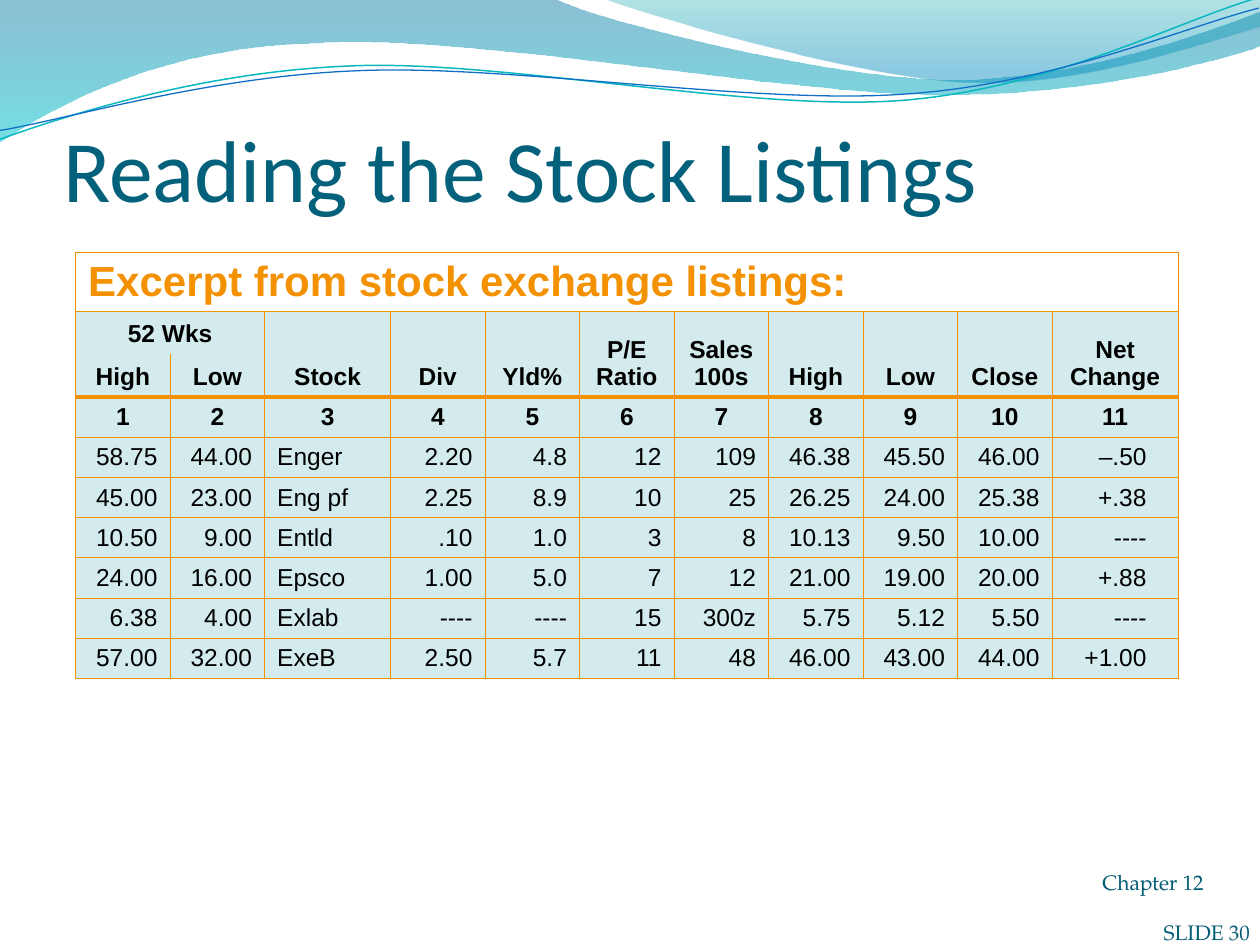
from lxml.etree import SubElement
from pptx import Presentation
from pptx.dml.color import RGBColor
from pptx.enum.text import MSO_ANCHOR, PP_ALIGN
from pptx.oxml.ns import qn
from pptx.util import Pt

SCALE = 9144
ORANGE, PALE, WHITE, BLACK = "F49100", "D3EBED", "FFFFFF", "000000"
TITLE_COLOR, FOOTER_COLOR = "04617B", "045D75"
FOOTER_FONT = "TeX Gyre Pagella"
THIN, THICK = 0.5, 3
CURVE_ROTATION = 357.3

COLUMN_WIDTHS = [75, 75, 100] + [75] * 7 + [100]
ROW_HEIGHTS = [23, 34, 34] + [23] * 7
TABLE_BOX = (60, 200, 875, 352)
STOCK_COLUMN, CHANGE_COLUMN = 2, 10
HEADERS = ["Stock", "Div", "Yld%", "P/E\vRatio", "Sales\v100s",
           "High", "Low", "Close", "Net\vChange"]
LISTINGS = [
    "58.75|44.00|Enger|2.20|4.8|12|109|46.38|45.50|46.00|–.50",
    "45.00|23.00|Eng pf|2.25|8.9|10|25|26.25|24.00|25.38|+.38",
    "10.50|9.00|Entld|.10|1.0|3|8|10.13|9.50|10.00|----",
    "24.00|16.00|Epsco|1.00|5.0|7|12|21.00|19.00|20.00|+.88",
    "6.38|4.00|Exlab|----|----|15|300z|5.75|5.12|5.50|----",
    "57.00|32.00|ExeB|2.50|5.7|11|48|46.00|43.00|44.00|+1.00",
]

WIDE_WAVE = [
    [(0, 0)], [(440, -1)],
    [(476, 17), (664, 63), (758, 63)], [(853, 63), (958, 26), (1000, 9)],
    [(1001, 36)],
    [(983, 44), (870, 76), (746, 75)], [(622, 75), (382, 28), (257, 34)],
    [(129, 36), (46, 83), (-1, 113)],
    [(0, 0)],
]
RIGHT_WAVE = [
    [(479, -1)],
    [(509, 11), (682, 62), (769, 65)], [(856, 69), (961, 32), (1000, 21)],
    [(1000, 0)], [(479, -1)],
]
TEAL_CURVE = [
    [(-2, 87)],
    [(47, 72), (158, 41), (278, 42)], [(396, 42), (591, 93), (712, 90)],
    [(832, 87), (940, 36), (1000, 22)],
]
BLUE_CURVE = [
    [(-2, 80)],
    [(46, 75), (164, 45), (283, 46)], [(403, 46), (596, 88), (716, 85)],
    [(835, 83), (942, 42), (1001, 30)],
]


def px(length):
    """Turn whole pixels into EMU."""
    return length * SCALE


def color(value):
    """Turn a hex string into a colour."""
    return RGBColor.from_string(value)


def format_text(text_frame, font, size, value, align=PP_ALIGN.LEFT, bold=False):
    """Format every paragraph and run of a text frame."""
    for paragraph in text_frame.paragraphs:
        paragraph.alignment = align
        for run in paragraph.runs:
            run.font.name = font
            run.font.size = Pt(size)
            run.font.bold = bold
            run.font.color.rgb = color(value)


def place_text(shape, text, margins, font, size, value, align=PP_ALIGN.LEFT):
    """Fill a bottom-anchored text shape."""
    text_frame = shape.text_frame
    text_frame.word_wrap = True
    text_frame.vertical_anchor = MSO_ANCHOR.BOTTOM
    text_frame.margin_left = text_frame.margin_right = 0
    text_frame.margin_top, text_frame.margin_bottom = map(px, margins)
    text_frame.text = text
    format_text(text_frame, font, size, value, align)


def add_title(slide, text):
    """Move and format the title placeholder."""
    title = slide.shapes.title
    title.left, title.top, title.width, title.height = map(px, (50, 30, 900, 145))
    place_text(title, text, (5, 0), "Calibri", 50, TITLE_COLOR)


def add_footer(slide, text, box, align):
    """Add a small line of text at the foot of the slide."""
    shape = slide.shapes.add_textbox(*map(px, box))
    place_text(shape, text, (0, 0), FOOTER_FONT, 12, FOOTER_COLOR, align)


def bend(shape, segments):
    """Turn each run of three straight steps into one cubic curve."""
    lines = iter(list(shape.element.spPr.iter(qn("a:lnTo"))))
    for segment in segments[1:]:
        steps = [next(lines) for _ in segment]
        if len(steps) == 3:
            steps[0].tag = qn("a:cubicBezTo")
            for step in steps[1:]:
                steps[0].append(step[0])
                step.getparent().remove(step)


def add_outline(slide, segments, close):
    """Add a curved freeform without shadow."""
    start, *points = [(px(x), px(y)) for segment in segments for x, y in segment]
    builder = slide.shapes.build_freeform(*start)
    builder.add_line_segments(points, close=close)
    shape = builder.convert_to_shape()
    shape.shadow.inherit = False
    bend(shape, segments)
    return shape


def add_wave(slide, segments, stops):
    """Add a wave with a vertical translucent gradient."""
    shape = add_outline(slide, segments, True)
    shape.line.fill.background()
    shape.fill.gradient()
    shape.fill.gradient_angle = 270
    for stop, (position, value, opacity) in zip(shape.fill.gradient_stops, stops):
        stop.position = position
        stop.color.rgb = color(value)
    solids = shape.element.spPr.iter(qn("a:srgbClr"))
    for solid, (position, value, opacity) in zip(solids, stops):
        SubElement(solid, qn("a:alpha"), val=str(opacity * 1000))


def add_curve(slide, segments, value, width):
    """Add an open curved line, slightly rotated."""
    shape = add_outline(slide, segments, False)
    shape.rotation = CURVE_ROTATION
    shape.fill.background()
    shape.line.color.rgb = color(value)
    shape.line.width = Pt(width)


def set_borders(cell, widths):
    """Draw left, right, top and bottom borders, where zero means none."""
    properties = cell._tc.get_or_add_tcPr()
    for index, (side, width) in enumerate(zip("LRTB", widths)):
        line = SubElement(properties, qn(f"a:ln{side}"), w=str(Pt(width)))
        properties.insert(index, line)
        if width:
            fill = SubElement(line, qn("a:solidFill"))
            SubElement(fill, qn("a:srgbClr"), val=ORANGE)
        else:
            SubElement(line, qn("a:noFill"))


def border_widths(row, column):
    """Return the border widths of a cell by its place in the table."""
    paired = column < STOCK_COLUMN
    top = {2: 0, 3: THICK}.get(row, THIN)
    bottom = {1: 0 if paired else THICK, 2: THICK}.get(row, THIN)
    return THIN, THIN, top, bottom


def fill_cell(cell, row, column, text):
    """Write and format one cell by its place in the table."""
    cell.fill.solid()
    cell.fill.fore_color.rgb = color(PALE if row else WHITE)
    set_borders(cell, border_widths(row, column))
    cell.vertical_anchor = MSO_ANCHOR.BOTTOM if row < 3 else MSO_ANCHOR.TOP
    if row > 3 and column == CHANGE_COLUMN:
        cell.margin_right = px(25)
    if row == 0 or row > 3 and column == STOCK_COLUMN:
        align = PP_ALIGN.LEFT
    else:
        align = PP_ALIGN.CENTER if row < 4 else PP_ALIGN.RIGHT
    cell.text_frame.text = text
    format_text(cell.text_frame, "Arial", 14 if row else 24,
                BLACK if row else ORANGE, align, row < 4)


def add_listings(slide):
    """Add the stock table with its merged headings."""
    count = len(COLUMN_WIDTHS)
    rows = [
        ["Excerpt from stock exchange listings:"] + [""] * (count - 1),
        ["52 Wks", "", *HEADERS],
        ["High", "Low"] + [""] * len(HEADERS),
        [str(number) for number in range(1, count + 1)],
        *[listing.split("|") for listing in LISTINGS],
    ]
    frame = slide.shapes.add_table(len(rows), count, *map(px, TABLE_BOX))
    table = frame.table
    table.first_row = table.horz_banding = False
    for column, width in zip(table.columns, COLUMN_WIDTHS):
        column.width = px(width)
    for row, height in zip(table.rows, ROW_HEIGHTS):
        row.height = px(height)
    frame.height = px(TABLE_BOX[3])
    for row, texts in enumerate(rows):
        for column, text in enumerate(texts):
            fill_cell(table.cell(row, column), row, column, text)
    table.cell(0, 0).merge(table.cell(0, count - 1))
    table.cell(1, 0).merge(table.cell(1, 1))
    for column in range(STOCK_COLUMN, count):
        table.cell(1, column).merge(table.cell(2, column))


def main():
    """Build and save the slide."""
    presentation = Presentation()
    presentation.slide_width, presentation.slide_height = px(1000), px(750)
    slide = presentation.slides.add_slide(presentation.slide_layouts[5])
    add_wave(slide, WIDE_WAVE, [(0, "0074A1", 45), (1, "00C6CF", 55)])
    add_wave(slide, RIGHT_WAVE, [(0, "00A1A9", 30), (0.8, "008BBF", 45)])
    add_curve(slide, TEAL_CURVE, "0AB8BF", 0.85)
    add_curve(slide, BLUE_CURVE, "0F6FC6", 0.75)
    add_title(slide, "Reading the Stock Listings")
    add_listings(slide)
    add_footer(slide, "SLIDE 30", (875, 698, 117, 52), PP_ALIGN.RIGHT)
    add_footer(slide, "Chapter 12", (875, 658, 133, 52), PP_ALIGN.LEFT)
    presentation.save("out.pptx")


if __name__ == "__main__":
    main()
